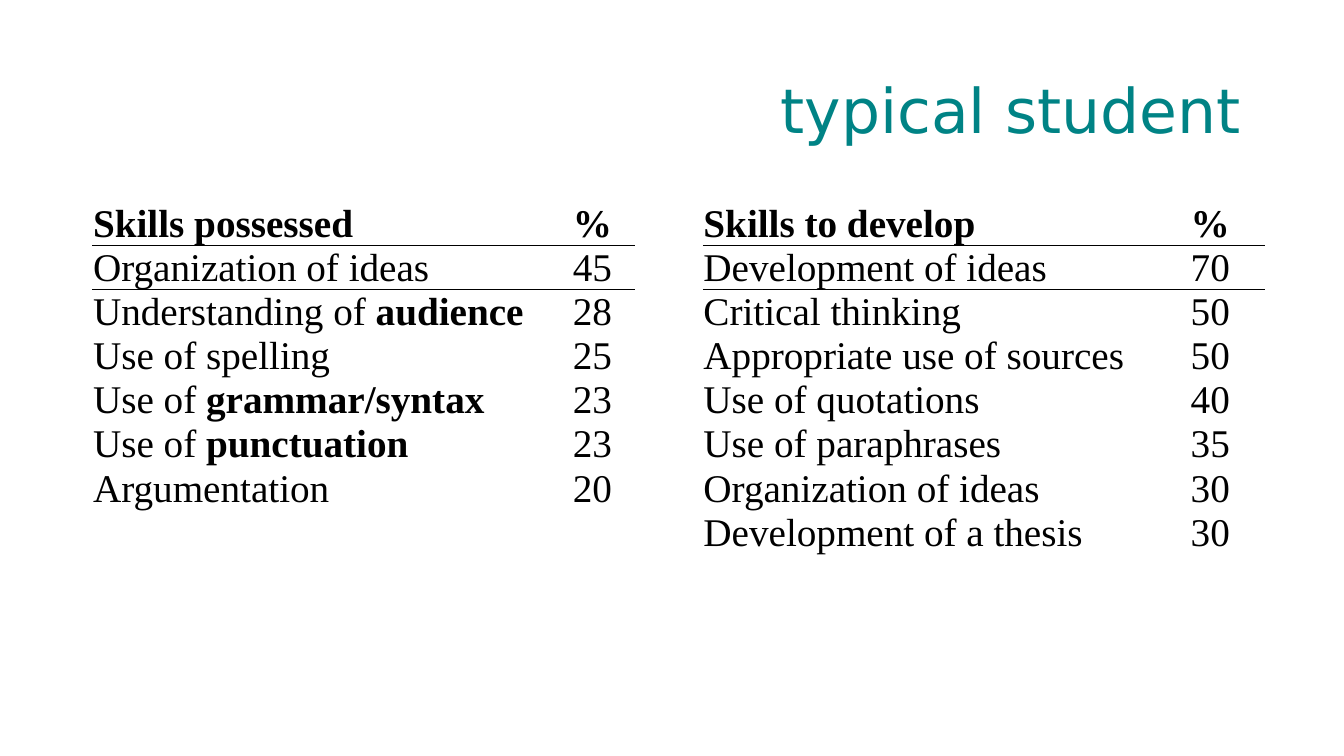
from lxml import etree
from pptx import Presentation
from pptx.dml.color import RGBColor
from pptx.enum.text import MSO_ANCHOR, PP_ALIGN
from pptx.oxml.ns import qn
from pptx.util import Pt

LEFT, CENTER, RIGHT = PP_ALIGN.LEFT, PP_ALIGN.CENTER, PP_ALIGN.RIGHT
MIDDLE, BOTTOM = MSO_ANCHOR.MIDDLE, MSO_ANCHOR.BOTTOM

COLORS = {"title": "008385", "text": "000000"}
TITLE = "typical student"

# Each label is a plain part and a bold part.
POSSESSED = [
    (("", "Skills possessed"), "%"),
    (("Organization of ideas", ""), "45"),
    (("Understanding of ", "audience"), "28"),
    (("Use of spelling", ""), "25"),
    (("Use of ", "grammar/syntax"), "23"),
    (("Use of ", "punctuation"), "23"),
    (("Argumentation", ""), "20"),
]
DEVELOP = [
    (("", "Skills to develop"), "%"),
    (("Development of ideas", ""), "70"),
    (("Critical thinking", ""), "50"),
    (("Appropriate use of sources", ""), "50"),
    (("Use of quotations", ""), "40"),
    (("Use of paraphrases", ""), "35"),
    (("Organization of ideas", ""), "30"),
    (("Development of a thesis", ""), "30"),
]
# Rows, left edge, column widths
TABLES = [
    (POSSESSED, 66, (327, 60.5)),
    (DEVELOP, 502, (323.5, 78)),
]
TOP, ROW, LINE, INSET = 144, 31.5, 31, 0.5
RULED = 2  # rows with a line below


def style(para, font, size, color, align):
    para.font.name = font
    para.font.size = Pt(size)
    para.font.color.rgb = RGBColor.from_string(COLORS[color])
    para.alignment = align


def border(cell, side, shown):
    line = etree.SubElement(cell._tc.get_or_add_tcPr(), qn("a:ln" + side))
    if shown:
        line.set("w", str(Pt(1)))
        fill = etree.SubElement(line, qn("a:solidFill"))
        etree.SubElement(fill, qn("a:srgbClr")).set("val", COLORS["text"])
    else:
        etree.SubElement(line, qn("a:noFill"))


def fill_cell(cell, parts, align, row):
    """Write the plain and bold parts, and rule the cell by its row."""
    para = cell.text_frame.paragraphs[0]
    for part, bold in zip(parts, (False, True)):
        if part:
            run = para.add_run()
            run.text = part
            run.font.bold = bold
    style(para, "Times New Roman", 28, "text", align)
    para.line_spacing = Pt(LINE)
    cell.vertical_anchor = BOTTOM
    cell.margin_left = cell.margin_right = cell.margin_top = Pt(INSET)
    cell.margin_bottom = 0
    for side in "LR":
        border(cell, side, False)
    border(cell, "T", 0 < row <= RULED)
    border(cell, "B", row < RULED)
    cell.fill.background()


def add_skills(slide, rows, left, widths):
    table = slide.shapes.add_table(
        len(rows), 2, Pt(left), Pt(TOP), Pt(sum(widths)), Pt(ROW * len(rows))
    ).table
    table.first_row = table.horz_banding = False
    for column, width in zip(table.columns, widths):
        column.width = Pt(width)
    for i, (label, share) in enumerate(rows):
        table.rows[i].height = Pt(ROW)
        value = ("", share) if i == 0 else (share, "")
        fill_cell(table.cell(i, 0), label, LEFT, i)
        fill_cell(table.cell(i, 1), value, CENTER, i)


def add_title(slide):
    frame = slide.shapes.add_textbox(Pt(66), Pt(28.8), Pt(828), Pt(104.4)).text_frame
    frame.word_wrap = True
    frame.vertical_anchor = MIDDLE
    para = frame.paragraphs[0]
    para.text = TITLE
    para.line_spacing = 0.9
    style(para, "DejaVu Sans", 44, "title", RIGHT)


def main():
    deck = Presentation()
    deck.slide_width, deck.slide_height = Pt(960), Pt(540)
    slide = deck.slides.add_slide(deck.slide_layouts[6])
    add_title(slide)
    for rows, left, widths in TABLES:
        add_skills(slide, rows, left, widths)
    deck.save("out.pptx")


if __name__ == "__main__":
    main()
